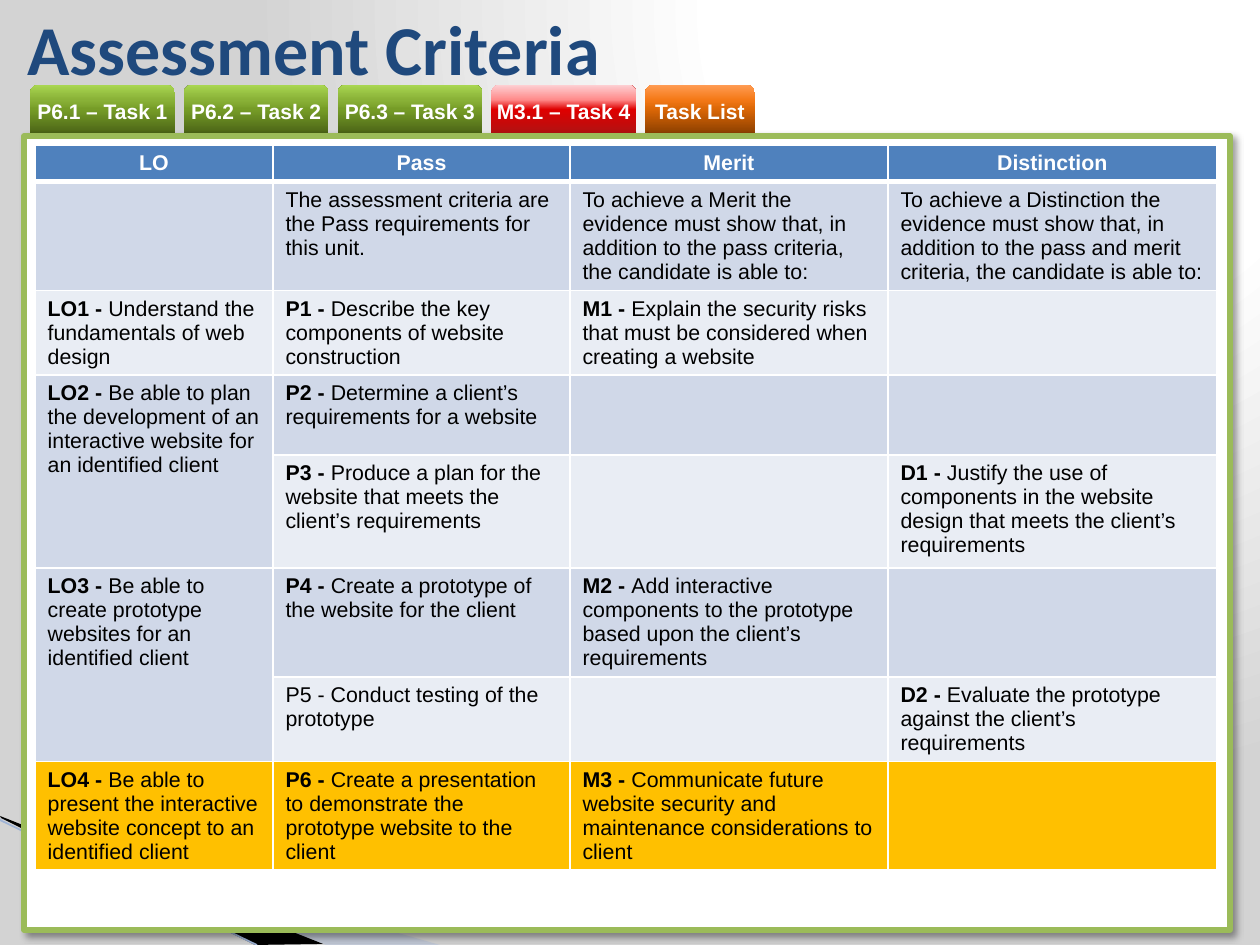
from lxml import etree
from pptx import Presentation
from pptx.dml.color import RGBColor
from pptx.enum.shapes import MSO_CONNECTOR, MSO_SHAPE
from pptx.enum.text import MSO_ANCHOR, PP_ALIGN
from pptx.oxml.ns import qn
from pptx.util import Pt

SCALE = 914400 / 126
TAB, RECT = MSO_SHAPE.ROUND_2_SAME_RECTANGLE, MSO_SHAPE.RECTANGLE
LINE = MSO_CONNECTOR.STRAIGHT
MID, LEFT, CENTER = MSO_ANCHOR.MIDDLE, PP_ALIGN.LEFT, PP_ALIGN.CENTER

THEME = {
    "title": dict(name="Calibri", size=40, bold=True, color="1F497D"),
    "tab": dict(name="Arial", size=12, bold=True, color="FFFFFF"),
    "head": dict(name="Arial", size=12.2, bold=True, color="FFFFFF"),
    "lead": dict(name="Arial", size=12.2, bold=True, color="000000"),
    "body": dict(name="Arial", size=12.2, bold=False, color="000000"),
    "fills": dict(head="4F81BD", dark="D0D8E8", light="E9EDF4", gold="FFC000"),
    "panel": ("FFFFFF", "9BBB59"),
    "streak": ("A7B9DB", "000000", "9EB3D6"),
    "rule": "FFFFFF",
    "back": [(0, "FFFFFF"), (40, "FFFFFF"), (100, "D3D3D3")],
    "green": [(0, "4A6316"), (50, "769C27"), (70, "89B137"), (100, "A9D651")],
    "red": [(0, "B21212"), (50, "DE0000"), (70, "FF8B8B"), (100, "FDCFD2")],
    "orange": [(0, "8B3F00"), (50, "DA6606"), (70, "F47917"), (100, "FF9C54")],
}

TITLE = "Assessment Criteria"
TABS = [
    ("P6.1 – Task 1", "green", 145),
    ("P6.2 – Task 2", "green", 145),
    ("P6.3 – Task 3", "green", 145),
    ("M3.1 – Task 4", "red", 145),
    ("Task List", "orange", 110),
]
COLS = [238, 297, 318, 329]
# Each row: fill, height in px, cells; a pair is a bold lead and its text.
ROWS = [
    ("head", 36, ["LO", "Pass", "Merit", "Distinction"]),
    ("dark", 109, [
        "",
        "The assessment criteria are the Pass requirements for this unit.",
        "To achieve a Merit the evidence must show that, in addition to the "
        "pass criteria, the candidate is able to:",
        "To achieve a Distinction the evidence must show that, in addition to "
        "the pass and merit criteria, the candidate is able to:"]),
    ("light", 84, [
        ("LO1 - ", "Understand the fundamentals of web design"),
        ("P1 - ", "Describe the key components of website construction"),
        ("M1 - ", "Explain the security risks that must be considered when "
                  "creating a website"),
        ""]),
    ("dark", 80, [
        ("LO2 - ", "Be able to plan the development of an interactive website "
                   "for an identified client"),
        ("P2 - ", "Determine a client’s requirements for a website"),
        "", ""]),
    ("light", 113, [
        None,
        ("P3 - ", "Produce a plan for the website that meets the client’s "
                  "requirements"),
        "",
        ("D1 - ", "Justify the use of components in the website design that "
                  "meets the client’s requirements")]),
    ("dark", 109, [
        ("LO3 - ", "Be able to create prototype websites for an identified "
                   "client"),
        ("P4 - ", "Create a prototype of the website for the client"),
        ("M2 - ", "Add interactive components to the prototype based upon the "
                  "client’s requirements"),
        ""]),
    ("light", 84, [
        None,
        "P5 - Conduct testing of the prototype",
        "",
        ("D2 - ", "Evaluate the prototype against the client’s requirements")]),
    ("gold", 108, [
        ("LO4 - ", "Be able to present the interactive website concept to an "
                   "identified client"),
        ("P6 - ", "Create a presentation to demonstrate the prototype website "
                  "to the client"),
        ("M3 - ", "Communicate future website security and maintenance "
                  "considerations to client"),
        ""]),
]
STREAKS = [
    [(0, 819), (440, 945), (326, 945), (0, 818)],
    [(0, 816), (323, 944), (255, 945), (1, 818)],
]


def px(*nums):
    return [round(n * SCALE) for n in nums]


def sub(node, tag, **attrs):
    part = etree.SubElement(node, qn(tag))
    for key, val in attrs.items():
        part.set(key, str(val))
    return part


def paint(fill, color):
    fill.solid()
    fill.fore_color.rgb = RGBColor.from_string(color)


def blend(fill, node, stops):
    """Give fill, held in node, these gradient stops; return its XML."""
    fill.gradient()
    grad = next(node.iter(qn("a:gradFill")))
    for part in list(grad):
        grad.remove(part)
    group = sub(grad, "a:gsLst")
    for pos, color in stops:
        sub(sub(group, "a:gs", pos=pos * 1000), "a:srgbClr", val=color)
    return grad


def write(para, text, style, align=LEFT):
    para.alignment = align
    run = para.add_run()
    run.text = text
    for key, val in THEME[style].items():
        if key == "color":
            run.font.color.rgb = RGBColor.from_string(val)
        else:
            setattr(run.font, key, Pt(val) if key == "size" else val)


def add_back(slide):
    grad = blend(slide.background.fill, slide.element, THEME["back"])
    path = sub(grad, "a:path", path="circle")
    sub(path, "a:fillToRect", l=65000, t=0, r=0, b=98000)
    pale, black, edge = THEME["streak"]
    for points, color in zip(STREAKS, (pale, black)):
        pen = slide.shapes.build_freeform(*points[0], scale=SCALE)
        pen.add_line_segments(points[1:], close=True)
        shape = pen.convert_to_shape()
        shape.shadow.inherit = False
        shape.line.fill.background()
        paint(shape.fill, color)
        if color == pale:
            tint = next(shape.element.spPr.iter(qn("a:srgbClr")))
            sub(tint, "a:alpha", val=40000)
    line = slide.shapes.add_connector(LINE, *px(0, 820, 257, 945))
    line.line.color.rgb = RGBColor.from_string(edge)
    line.line.width = Pt(0.95)
    sub(line.element.spPr, "a:effectLst")


def add_tabs(slide):
    for num, (text, tone, width) in enumerate(TABS):
        shape = slide.shapes.add_shape(TAB, *px(30 + 153.75 * num, 85, width, 49))
        shape.shadow.inherit = False
        shape.line.fill.background()
        grad = blend(shape.fill, shape.element.spPr, THEME[tone])
        sub(grad, "a:lin", ang=270 * 60000, scaled=0)
        frame = shape.text_frame
        frame.vertical_anchor = MID
        for side in ("left", "top", "right", "bottom"):
            setattr(frame, "margin_" + side, 0)
        write(frame.paragraphs[0], text, "tab", CENTER)


def add_panel(slide):
    shape = slide.shapes.add_shape(RECT, *px(24, 136, 1206, 794))
    fill, edge = THEME["panel"]
    paint(shape.fill, fill)
    shape.line.color.rgb = RGBColor.from_string(edge)
    shape.line.width = Pt(3)
    shape.shadow.inherit = False
    cast = sub(shape.element.spPr.find(qn("a:effectLst")), "a:outerShdw",
               blurRad=Pt(4), dist=Pt(3), dir=45 * 60000, algn="tl")
    sub(sub(cast, "a:srgbClr", val="000000"), "a:alpha", val=40000)


def rule(cell, row):
    """Draw the cell's borders, thick below the header row."""
    props = cell._tc.get_or_add_tcPr()
    wide = {"T": row == 1, "B": row == 0}
    for spot, side in enumerate("LRTB"):
        line = sub(props, "a:ln" + side, w=Pt(3 if wide.get(side) else 1))
        sub(sub(line, "a:solidFill"), "a:srgbClr", val=THEME["rule"])
        props.insert(spot, line)


def add_grid(slide):
    tall = sum(row[1] for row in ROWS)
    spot = px(35, 145, sum(COLS), tall)
    table = slide.shapes.add_table(len(ROWS), len(COLS), *spot).table
    for col, width in zip(table.columns, px(*COLS)):
        col.width = width
    for r, (tone, high, cells) in enumerate(ROWS):
        table.rows[r].height = px(high)[0]
        style, align = ("head", CENTER) if r == 0 else ("body", LEFT)
        for c, text in enumerate(cells):
            cell = table.cell(r, c)
            paint(cell.fill, THEME["fills"][tone if text is not None else "dark"])
            rule(cell, r)
            para = cell.text_frame.paragraphs[0]
            if text is None:
                table.cell(r - 1, c).merge(cell)
            elif isinstance(text, tuple):
                write(para, text[0], "lead")
                write(para, text[1], "body")
            elif text:
                write(para, text, style, align)


def main():
    deck = Presentation()
    deck.slide_width, deck.slide_height = px(1260, 945)
    slide = deck.slides.add_slide(deck.slide_layouts[5])
    add_back(slide)
    add_tabs(slide)
    add_panel(slide)
    title = slide.shapes.title
    title.left, title.top, title.width, title.height = px(15, 0, 1062, 96)
    title.text_frame.vertical_anchor = MID
    write(title.text_frame.paragraphs[0], TITLE, "title")
    add_grid(slide)
    deck.save("out.pptx")


if __name__ == "__main__":
    main()
